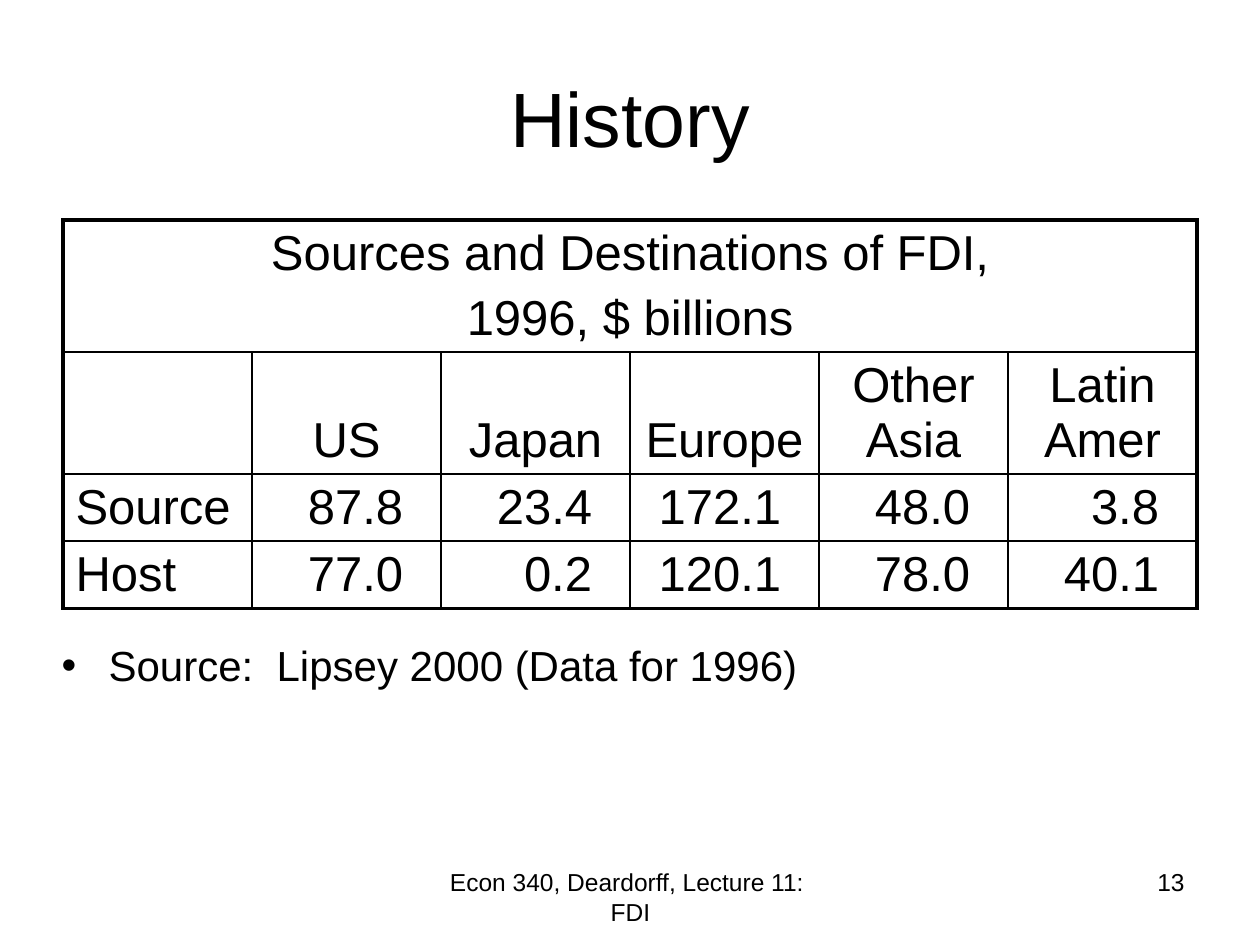
from lxml.etree import SubElement
from pptx import Presentation
from pptx.dml.color import RGBColor
from pptx.enum.text import MSO_ANCHOR, MSO_AUTO_SIZE, PP_ALIGN
from pptx.oxml.ns import qn
from pptx.util import Emu, Pt

THEME = {
    "font": "Arial",
    "ink": "000000",
    "title": 44,
    "table": 28,
    "source": 24,
    "footer": 14,
    "outer_line": 2.25,
    "inner_line": 1,
}
SCALE = 914400 / 126


def px(length):
    return Emu(round(length * SCALE))


def write(frame, lines, size, align, **spacing):
    frame.text = "\n".join(lines)
    for paragraph in frame.paragraphs:
        for name, value in {"alignment": align, **spacing}.items():
            setattr(paragraph, name, value)
        for run in paragraph.runs:
            for name, value in {"name": THEME["font"], "size": Pt(THEME[size])}.items():
                setattr(run.font, name, value)
            run.font.color.rgb = RGBColor.from_string(THEME["ink"])


deck = Presentation()
deck.slide_width, deck.slide_height = px(1260), px(945)
slide = deck.slides.add_slide(deck.slide_layouts[1])

heading, citation = slide.placeholders
places = [(heading, (63, 38, 1134, 158)), (citation, (49, 639, 1096, 62))]
for placeholder, place in places:
    for name, length in zip(("left", "top", "width", "height"), place):
        setattr(placeholder, name, px(length))
    placeholder.text_frame.auto_size = MSO_AUTO_SIZE.NONE

heading.text_frame.vertical_anchor = MSO_ANCHOR.MIDDLE
write(heading.text_frame, ["History"], "title", PP_ALIGN.CENTER)

write(citation.text_frame, ["Source:  Lipsey 2000 (Data for 1996)"], "source",
      PP_ALIGN.LEFT, line_spacing=0.9, space_before=Pt(4.8))
bullet_format = citation.text_frame.paragraphs[0]._p.get_or_add_pPr()
for name, length in {"marL": 47, "indent": -47}.items():
    bullet_format.set(name, str(px(length)))
SubElement(bullet_format, qn("a:buChar"), char="•")

investment = [
    ["Sources and Destinations of FDI,\n1996, $ billions", "", "", "", "", ""],
    ["", "US", "Japan", "Europe", "Other Asia", "Latin Amer"],
    ["Source", "87.8", "23.4", "172.1", "48.0", "3.8"],
    ["Host", "77.0", "0.2", "120.1", "78.0", "40.1"],
]
row_heights = [132, 122, 67, 67]
last_row, last_column = len(investment) - 1, len(investment[0]) - 1
table = slide.shapes.add_table(last_row + 1, last_column + 1, px(63), px(220),
                               px(1134), px(sum(row_heights))).table
for name in ("first_row", "horz_banding"):
    setattr(table, name, False)
for column in table.columns:
    column.width = px(189)

for r, (row, height) in enumerate(zip(investment, row_heights)):
    table.rows[r].height = px(height)
    for c, words in enumerate(row):
        cell = table.cell(r, c)
        is_value = r > 1 and c > 0
        if is_value:
            align = PP_ALIGN.RIGHT
            cell.margin_right = px(38)
        else:
            align = PP_ALIGN.CENTER if r < 2 else PP_ALIGN.LEFT
        cell.vertical_anchor = MSO_ANCHOR.BOTTOM if r == 1 else MSO_ANCHOR.TOP
        if words:
            write(cell.text_frame, words.split("\n"), "table", align, space_before=Pt(5.6))
        on_outside = {
            "lnL": c == 0,
            "lnR": r == 0 or c == last_column,
            "lnT": r == 0,
            "lnB": r == last_row,
        }
        cell_format = cell._tc.get_or_add_tcPr()
        for side, outside in on_outside.items():
            weight = THEME["outer_line" if outside else "inner_line"]
            border = SubElement(cell_format, qn(f"a:{side}"), w=str(Pt(weight)))
            SubElement(SubElement(border, qn("a:solidFill")), qn("a:srgbClr"), val=THEME["ink"])
        cell.fill.background()
table.cell(0, 0).merge(table.cell(0, last_column))

footers = [
    ("Econ 340, Deardorff, Lecture 11:  FDI", 431, 399, PP_ALIGN.CENTER),
    ("13", 903, 294, PP_ALIGN.RIGHT),
]
for words, left, width, align in footers:
    footer = slide.shapes.add_textbox(px(left), px(861), px(width), px(66)).text_frame
    footer.word_wrap = True
    write(footer, [words], "footer", align)

deck.save("out.pptx")
